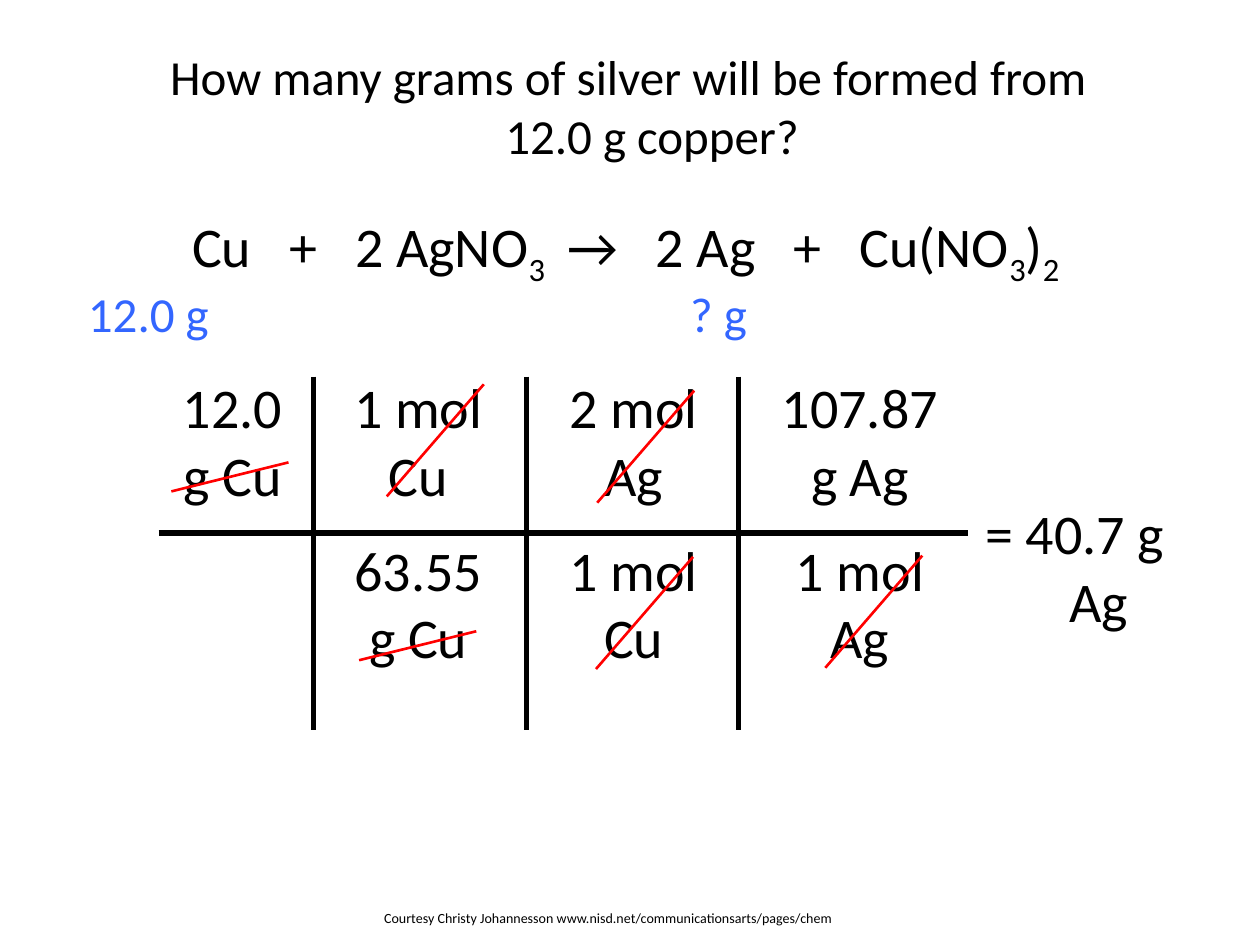
"""Build a stoichiometry slide: grams of silver formed from 12.0 g of copper."""
from lxml.etree import SubElement
from pptx import Presentation
from pptx.dml.color import RGBColor
from pptx.enum.shapes import MSO_CONNECTOR
from pptx.enum.text import MSO_ANCHOR, MSO_AUTO_SIZE, PP_ALIGN
from pptx.oxml.ns import qn
from pptx.util import Inches, Pt

BLACK = RGBColor(0x00, 0x00, 0x00)
BLUE = RGBColor(0x33, 0x66, 0xFF)
RED = RGBColor(0xFF, 0x00, 0x00)


def add_run(paragraph, text, size, color=BLACK):
    run = paragraph.add_run()
    run.text = text
    run.font.name = "Calibri"
    run.font.size = Pt(size)
    run.font.color.rgb = color
    return run


def add_line(x1, y1, x2, y2, color, width):
    line = slide.shapes.add_connector(
        MSO_CONNECTOR.STRAIGHT, Inches(x1), Inches(y1), Inches(x2), Inches(y2))
    line.line.color.rgb = color
    line.line.width = Pt(width)
    SubElement(line._element.spPr, qn("a:effectLst"))


prs = Presentation()
prs.slide_width, prs.slide_height = Inches(10), Inches(7.5)
slide = prs.slides.add_slide(prs.slide_layouts[1])
slide.shapes.title._element.getparent().remove(slide.shapes.title._element)

question = slide.placeholders[1]
question.left, question.top = Inches(0.9), Inches(0.32)
question.width, question.height = Inches(8.17), Inches(1.65)
question.text_frame.auto_size = MSO_AUTO_SIZE.NONE
question.text_frame.vertical_anchor = MSO_ANCHOR.TOP
sentence = question.text_frame.paragraphs[0]
sentence.alignment = PP_ALIGN.CENTER
sentence.space_before = Pt(0)
add_run(sentence, "How many grams of silver will be formed from 12.0 g copper?", 28)
indent = sentence._p.get_or_add_pPr()
indent.set("marL", str(Inches(0.38)))
indent.set("indent", str(Inches(-0.38)))
SubElement(indent, qn("a:buNone"))

equation = slide.shapes.add_textbox(Inches(0.68), Inches(1.57), Inches(8.63), Inches(0.9))
equation.text_frame.word_wrap = True
reaction = equation.text_frame.paragraphs[0]
reaction.alignment = PP_ALIGN.CENTER
reaction.line_spacing = 1.1
for formula, subscript in [("Cu   +   2 AgNO", "3   "),
                           ("→   2 Ag   +   Cu(NO", "3"),
                           (")", "2 ")]:
    add_run(reaction, formula, 32)
    add_run(reaction, subscript, 32).font._element.set("baseline", "-25000")

for left, width, mass in [(0.6, 2, "12.0 g"), (5.38, 1.27, "? g")]:
    amount = slide.shapes.add_textbox(Inches(left), Inches(2.2), Inches(width), Inches(0.78))
    amount.text_frame.word_wrap = True
    add_run(amount.text_frame.paragraphs[0], mass, 28, BLUE)

add_line(1.26, 4.23, 7.68, 4.23, BLACK, 3)
for x in (2.49, 4.18, 5.86):
    add_line(x, 2.99, x, 5.79, BLACK, 3)

factors = [
    (1.17, 1.35, ["12.0", "g Cu"]),
    (2.53, 1.58, ["1 mol", "Cu", "63.55", "g Cu"]),
    (4.25, 1.56, ["2 mol", "Ag", "1 mol", "Cu"]),
    (5.9, 1.85, ["107.87", "g Ag", "1 mol", "Ag"]),
]
for left, width, rows in factors:
    factor = slide.shapes.add_textbox(
        Inches(left), Inches(2.91), Inches(width), Inches(0.14 + 0.7 * len(rows)))
    frame = factor.text_frame
    frame.word_wrap = True
    for index, row in enumerate(rows):
        paragraph = frame.add_paragraph() if index else frame.paragraphs[0]
        paragraph.alignment = PP_ALIGN.CENTER
        if index == 2:
            paragraph.space_before = Pt(16)
        add_run(paragraph, row, 32)

answer = slide.shapes.add_textbox(Inches(7.72), Inches(3.91), Inches(2.28), Inches(1.64))
answer.text_frame.word_wrap = True
add_run(answer.text_frame.paragraphs[0], "= 40.7 g", 32)
element = answer.text_frame.add_paragraph()
element._p.get_or_add_pPr().set("marL", str(Inches(0.67)))
add_run(element, "Ag", 32)

for x, y in [(1.36, 3.9), (2.85, 5.24)]:
    add_line(x, y, x + 0.93, y - 0.23, RED, 1.5)
for x, y in [(3.84, 3.05), (5.5, 4.42), (5.51, 3.1), (7.32, 4.41)]:
    add_line(x, y, x - 0.77, y + 0.89, RED, 1.5)

courtesy = slide.shapes.add_textbox(Inches(2.95), Inches(7.17), Inches(4.08), Inches(0.37))
courtesy.text_frame.word_wrap = False
courtesy.text_frame.auto_size = MSO_AUTO_SIZE.SHAPE_TO_FIT_TEXT
add_run(courtesy.text_frame.paragraphs[0],
        "Courtesy Christy Johannesson www.nisd.net/communicationsarts/pages/chem", 8)

prs.save("out.pptx")
